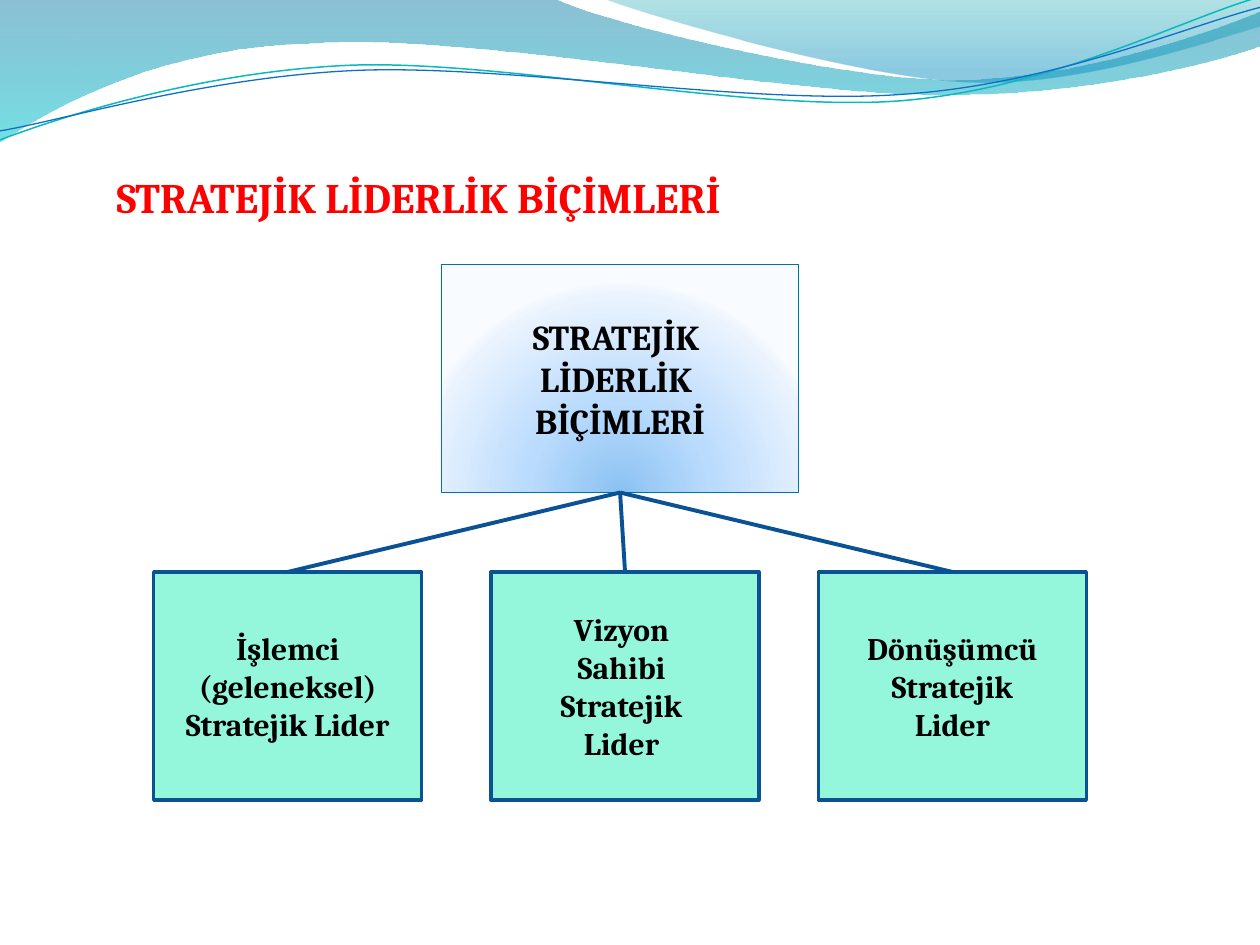
"""Build a slide showing the forms of strategic leadership as a small tree."""
from dataclasses import dataclass
from typing import NamedTuple

from lxml.etree import SubElement
from pptx import Presentation
from pptx.dml.color import RGBColor as RGB
from pptx.enum.shapes import MSO_CONNECTOR as CONN, MSO_SHAPE as SHAPE
from pptx.enum.text import MSO_ANCHOR as ANCHOR, MSO_AUTO_SIZE as AUTO, PP_ALIGN as ALIGN
from pptx.oxml import parse_xml
from pptx.oxml.ns import nsdecls, qn
from pptx.util import Cm, Pt


class Stop(NamedTuple):
    pos: int
    color: str
    alpha: int = 100


class Wave(NamedTuple):
    start: tuple[float, float]
    segments: list[tuple[float, ...]]
    stops: tuple[Stop, ...] = ()
    line: str = ""
    weight: float = 0
    rotation: float = 0


class Box(NamedTuple):
    left: float
    top: float
    width: float
    height: float
    lines: list[str]
    size: int
    line: str
    weight: float
    fill: str = ""
    stops: tuple[Stop, ...] = ()


@dataclass(frozen=True)
class Theme:
    font: str = "Cambria"
    title: str = "FF0000"
    text: str = "000000"
    root_line: str = "0074A1"
    leaf_fill: str = "94F7DC"
    leaf_line: str = "0B5292"
    link: str = "095295"
    teal_line: str = "0AB8BF"
    blue_line: str = "0F6FC6"
    back_wave: tuple[Stop, ...] = (Stop(0, "0074A1", 45), Stop(100, "00C6CF", 55))
    front_wave: tuple[Stop, ...] = (Stop(0, "00A1A9", 30), Stop(80, "008BBF", 45))
    glow: tuple[Stop, ...] = (Stop(0, "8BC2F1"), Stop(43, "B9DBFD"),
                              Stop(93, "EAF3FE"), Stop(100, "F8FBFF"))
    title_size: int = 24
    root_size: int = 20
    leaf_size: int = 18


THEME = Theme()
TILT = 357.3
DOWNWARD = '<a:lin ang="5400000" scaled="0"/>'
RADIAL = ('<a:path path="circle"><a:fillToRect l="50000" t="130000" '
          'r="50000" b="-30000"/></a:path>')

WAVES = [
    Wave((0, 0), [(11.18, -0.03),
                  (12.09, 0.43, 16.87, 1.6, 19.25, 1.6),
                  (21.67, 1.6, 24.33, 0.66, 25.4, 0.23),
                  (25.43, 0.91),
                  (24.97, 1.12, 22.1, 1.93, 18.95, 1.91),
                  (15.8, 1.91, 9.7, 0.71, 6.53, 0.86),
                  (3.25, 0.91, 1.17, 2.11, -0.03, 2.87),
                  (0, 0)], THEME.back_wave),
    Wave((12.17, -0.03), [(12.93, 0.28, 17.32, 1.57, 19.53, 1.65),
                          (21.74, 1.75, 24.41, 0.81, 25.4, 0.53),
                          (25.4, 0), (12.17, -0.03)], THEME.front_wave),
    Wave((-0.05, 2.22), [(1.19, 1.82, 4.02, 1.04, 7.05, 1.05),
                         (10.05, 1.07, 15.02, 2.37, 18.08, 2.29),
                         (21.13, 2.2, 23.87, 0.91, 25.41, 0.55)],
         line=THEME.teal_line, weight=0.85, rotation=TILT),
    Wave((-0.04, 2.04), [(1.16, 1.9, 4.18, 1.15, 7.2, 1.16),
                         (10.25, 1.18, 15.13, 2.25, 18.18, 2.16),
                         (21.21, 2.1, 23.93, 1.06, 25.45, 0.75)],
         line=THEME.blue_line, weight=0.75, rotation=TILT),
]

ROOT = Box(8.9, 5.33, 7.2, 4.6, ["STRATEJİK ", "LİDERLİK ", "BİÇİMLERİ"],
           THEME.root_size, THEME.root_line, 0.75, stops=THEME.glow)
LEAVES = [
    Box(left, 11.53, 5.4, 4.6, lines, THEME.leaf_size, THEME.leaf_line, 2, THEME.leaf_fill)
    for left, lines in [
        (3.1, ["İşlemci (geleneksel) Stratejik Lider"]),
        (9.9, ["Vizyon ", "Sahibi ", "Stratejik ", "Lider "]),
        (16.5, ["Dönüşümcü", "Stratejik", "Lider"]),
    ]
]


def set_gradient(sp, stops: tuple[Stop, ...], direction: str) -> None:
    """Give a shape a gradient fill."""
    sp.fill.gradient()
    old = sp._element.spPr.find(qn("a:gradFill"))
    marks = "".join(
        f'<a:gs pos="{s.pos * 1000}"><a:srgbClr val="{s.color}">'
        f'<a:alpha val="{s.alpha * 1000}"/></a:srgbClr></a:gs>' for s in stops)
    old.getparent().replace(old, parse_xml(
        f'<a:gradFill {nsdecls("a")} rotWithShape="1"><a:gsLst>{marks}</a:gsLst>'
        f'{direction}</a:gradFill>'))


def set_line(line, color: str, weight: float) -> None:
    """Set the colour and width of a line."""
    line.color.rgb = RGB.from_string(color)
    line.width = Pt(weight)


def bend(sp, segments: list[tuple[float, ...]]) -> None:
    """Turn each run of three line points into one cubic curve."""
    lines = iter(list(sp._element.iter(qn("a:lnTo"))))
    for seg in segments:
        group = [next(lines) for _ in range(len(seg) // 2)]
        if len(group) == 3:
            curve = parse_xml(f'<a:cubicBezTo {nsdecls("a")}/>')
            group[0].addprevious(curve)
            for node in group:
                curve.append(node[0])
                node.getparent().remove(node)


def draw_wave(shapes, wave: Wave) -> None:
    """Draw a filled band or a thin curve."""
    builder = shapes.build_freeform(*(Cm(v) for v in wave.start))
    points = [(Cm(x), Cm(y)) for seg in wave.segments for x, y in zip(seg[::2], seg[1::2])]
    builder.add_line_segments(points, close=bool(wave.stops))
    sp = builder.convert_to_shape()
    bend(sp, wave.segments)
    sp.rotation = wave.rotation
    sp.shadow.inherit = False
    if wave.stops:
        set_gradient(sp, wave.stops, DOWNWARD)
        sp.line.fill.background()
    else:
        sp.fill.background()
        set_line(sp.line, wave.line, wave.weight)


def write(tf, lines: list[str], size: int, color: str, align: ALIGN) -> None:
    """Write one bold paragraph for each line."""
    for i, text in enumerate(lines):
        p = tf.add_paragraph() if i else tf.paragraphs[0]
        p.text, p.alignment = text, align
        p.font.name, p.font.size, p.font.bold = THEME.font, Pt(size), True
        p.font.color.rgb = RGB.from_string(color)


def draw_box(shapes, box: Box):
    """Draw a labelled rectangle and return it."""
    sp = shapes.add_shape(SHAPE.RECTANGLE, *(Cm(v) for v in box[:4]))
    sp.shadow.inherit = False
    if box.stops:
        set_gradient(sp, box.stops, RADIAL)
    else:
        sp.fill.solid()
        sp.fill.fore_color.rgb = RGB.from_string(box.fill)
    set_line(sp.line, box.line, box.weight)
    tf = sp.text_frame
    tf.word_wrap, tf.vertical_anchor = True, ANCHOR.MIDDLE
    write(tf, box.lines, box.size, THEME.text, ALIGN.CENTER)
    return sp


def draw_link(shapes, parent, child) -> None:
    """Join the bottom of the parent to the top of the child."""
    link = shapes.add_connector(CONN.STRAIGHT, 0, 0, 0, 0)
    link.begin_connect(parent, 2)
    link.end_connect(child, 0)
    set_line(link.line, THEME.link, 2.25)
    SubElement(link._element.spPr, qn("a:effectLst"))


def main() -> None:
    """Build and save the slide."""
    prs = Presentation()
    prs.slide_width, prs.slide_height = Cm(25.4), Cm(19.05)
    shapes = prs.slides.add_slide(prs.slide_layouts[6]).shapes
    for wave in WAVES:
        draw_wave(shapes, wave)
    tf = shapes.add_textbox(Cm(2.1), Cm(3.33), Cm(13.94), Cm(1.27)).text_frame
    tf.word_wrap, tf.auto_size = False, AUTO.SHAPE_TO_FIT_TEXT
    write(tf, ["STRATEJİK LİDERLİK BİÇİMLERİ"], THEME.title_size, THEME.title, ALIGN.LEFT)
    root = draw_box(shapes, ROOT)
    for leaf in [draw_box(shapes, box) for box in LEAVES]:
        draw_link(shapes, root, leaf)
    prs.save("out.pptx")


if __name__ == "__main__":
    main()
